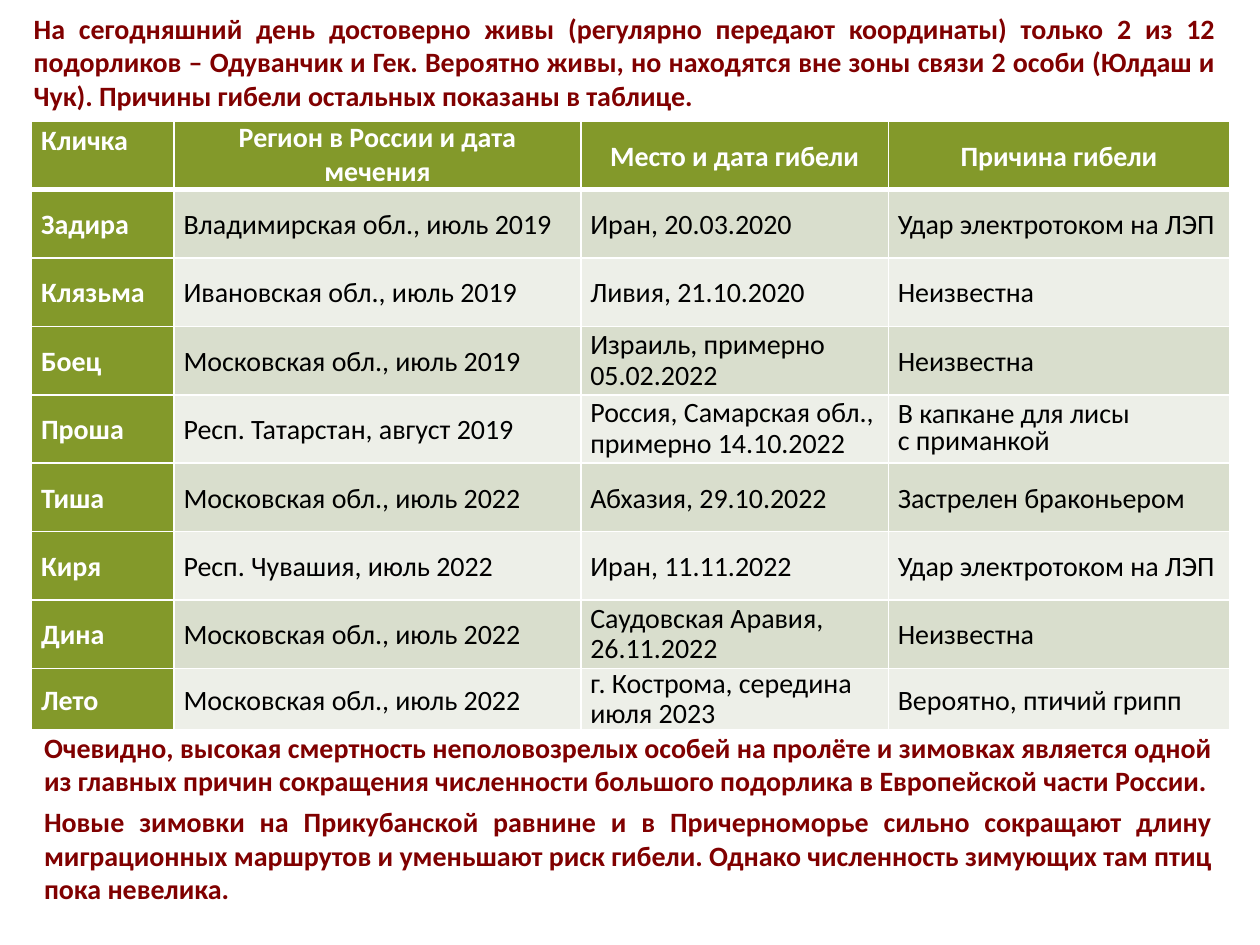
from dataclasses import dataclass
from typing import NamedTuple

from lxml.etree import SubElement
from pptx import Presentation
from pptx.dml.color import RGBColor
from pptx.enum.text import MSO_ANCHOR, PP_ALIGN
from pptx.oxml.ns import qn
from pptx.util import Cm, Pt


@dataclass(frozen=True)
class Theme:
    font: str = "Calibri"
    size: float = 16
    accent: str = "83992A"
    odd_band: str = "D9DECD"
    even_band: str = "EDEFE8"
    white: str = "FFFFFF"
    black: str = "000000"
    maroon: str = "800000"
    thin: float = 1
    thick: float = 3


class Eagle(NamedTuple):
    name: str
    tagged: str
    death: str
    cause: str
    death_spacing: float = 1.07
    cause_spacing: float = 1.07


class Note(NamedTuple):
    left: float
    top: float
    width: float
    height: float
    texts: tuple


THEME = Theme()
HEADINGS = ("Кличка", "Регион в России и дата мечения", "Место и дата гибели", "Причина гибели")
EAGLES = (
    Eagle("Задира", "Владимирская обл., июль 2019", "Иран, 20.03.2020", "Удар электротоком на ЛЭП"),
    Eagle("Клязьма", "Ивановская обл., июль 2019", "Ливия, 21.10.2020", "Неизвестна"),
    Eagle("Боец", "Московская обл., июль 2019", "Израиль, примерно 05.02.2022", "Неизвестна", 0.9),
    Eagle("Проша", "Респ. Татарстан, август 2019", "Россия, Самарская обл., примерно 14.10.2022",
          "В капкане для лисы\nс приманкой", 0.9, 0.8),
    Eagle("Тиша", "Московская обл., июль 2022", "Абхазия, 29.10.2022", "Застрелен браконьером"),
    Eagle("Киря", "Респ. Чувашия, июль 2022", "Иран, 11.11.2022", "Удар электротоком на ЛЭП"),
    Eagle("Дина", "Московская обл., июль 2022", "Саудовская Аравия, 26.11.2022", "Неизвестна", 0.9),
    Eagle("Лето", "Московская обл., июль 2022", "г. Кострома, середина июля 2023",
          "Вероятно, птичий грипп", 0.9),
)
NOTES = (
    Note(0.43, 0.1, 24.33, 2.31, (
        "На сегодняшний день достоверно живы (регулярно передают координаты) только 2 из 12 "
        "подорликов – Одуванчик и Гек. Вероятно живы, но находятся вне зоны связи 2 особи "
        "(Юлдаш и Чук). Причины гибели остальных показаны в таблице.",)),
    Note(0.64, 14.6, 24.05, 4.45, (
        "Очевидно, высокая смертность неполовозрелых особей на пролёте и зимовках является одной "
        "из главных причин сокращения численности большого подорлика в Европейской части России.",
        "Новые зимовки на Прикубанской равнине и в Причерноморье сильно сокращают длину "
        "миграционных маршрутов и уменьшают риск гибели. Однако численность зимующих там птиц "
        "пока невелика.")),
)
COLUMN_WIDTHS = (2.87, 8.2, 6.2, 6.88)
ROW_HEIGHTS = (1.33, *[1.38] * 7, 1.2)


def write(paragraph, text: str, *, color: str, bold: bool = False,
          align=PP_ALIGN.LEFT, spacing: float = 1.0, after: float = 0) -> None:
    paragraph.alignment = align
    paragraph.line_spacing = spacing
    paragraph.space_after = Pt(after)
    span = paragraph.add_run()
    span.text = text
    span.font.name = THEME.font
    span.font.size = Pt(THEME.size)
    span.font.bold = bold
    span.font.color.rgb = RGBColor.from_string(color)


def add_note(page, note: Note) -> None:
    box = page.shapes.add_textbox(Cm(note.left), Cm(note.top), Cm(note.width), Cm(note.height))
    frame = box.text_frame
    frame.word_wrap = True
    for index, text in enumerate(note.texts):
        paragraph = frame.add_paragraph() if index else frame.paragraphs[0]
        last = index == len(note.texts) - 1
        write(paragraph, text, color=THEME.maroon, bold=True,
              align=PP_ALIGN.JUSTIFY, after=0 if last else 4)


def set_borders(cell, **widths: float) -> None:
    properties = cell._tc.get_or_add_tcPr()
    for side, width in widths.items():
        line = SubElement(properties, qn(f"a:ln{side}"), w=str(Pt(width)))
        fill = SubElement(line, qn("a:solidFill"))
        SubElement(fill, qn("a:srgbClr"), val=THEME.white)


def fill_cell(cell, text: str, *, fill: str, anchor=MSO_ANCHOR.MIDDLE,
              bottom: float = THEME.thin, **style) -> None:
    set_borders(cell, L=THEME.thin, R=THEME.thin, B=bottom)
    cell.fill.solid()
    cell.fill.fore_color.rgb = RGBColor.from_string(fill)
    cell.margin_left = cell.margin_right = Cm(0.19)
    cell.margin_top = cell.margin_bottom = 0
    cell.vertical_anchor = anchor
    for index, line in enumerate(text.split("\n")):
        frame = cell.text_frame
        paragraph = frame.add_paragraph() if index else frame.paragraphs[0]
        write(paragraph, line, **style)


def add_eagle_table(page) -> None:
    table = page.shapes.add_table(
        len(ROW_HEIGHTS), len(COLUMN_WIDTHS), Cm(0.64), Cm(2.44),
        Cm(sum(COLUMN_WIDTHS)), Cm(sum(ROW_HEIGHTS))).table
    for column, width in zip(table.columns, COLUMN_WIDTHS):
        column.width = Cm(width)
    for row, height in zip(table.rows, ROW_HEIGHTS):
        row.height = Cm(height)

    # Header row
    for index, heading in enumerate(HEADINGS):
        fill_cell(table.cell(0, index), heading, fill=THEME.accent, bottom=THEME.thick,
                  color=THEME.white, bold=True,
                  anchor=MSO_ANCHOR.TOP if index < 2 else MSO_ANCHOR.MIDDLE,
                  align=PP_ALIGN.CENTER if index else PP_ALIGN.LEFT,
                  spacing=1.0 if index == 1 else 1.07)

    # One banded row for each bird
    for number, eagle in enumerate(EAGLES, start=1):
        band = THEME.odd_band if number % 2 else THEME.even_band
        fill_cell(table.cell(number, 0), eagle.name, fill=THEME.accent,
                  color=THEME.white, bold=True, spacing=1.07)
        details = ((eagle.tagged, 1.07), (eagle.death, eagle.death_spacing),
                   (eagle.cause, eagle.cause_spacing))
        for index, (text, spacing) in enumerate(details, start=1):
            fill_cell(table.cell(number, index), text, fill=band,
                      color=THEME.black, spacing=spacing)


def main() -> None:
    deck = Presentation()
    deck.slide_width, deck.slide_height = Cm(25.4), Cm(19.05)
    page = deck.slides.add_slide(deck.slide_layouts[6])
    add_eagle_table(page)
    for note in NOTES:
        add_note(page, note)
    deck.save("out.pptx")


if __name__ == "__main__":
    main()
